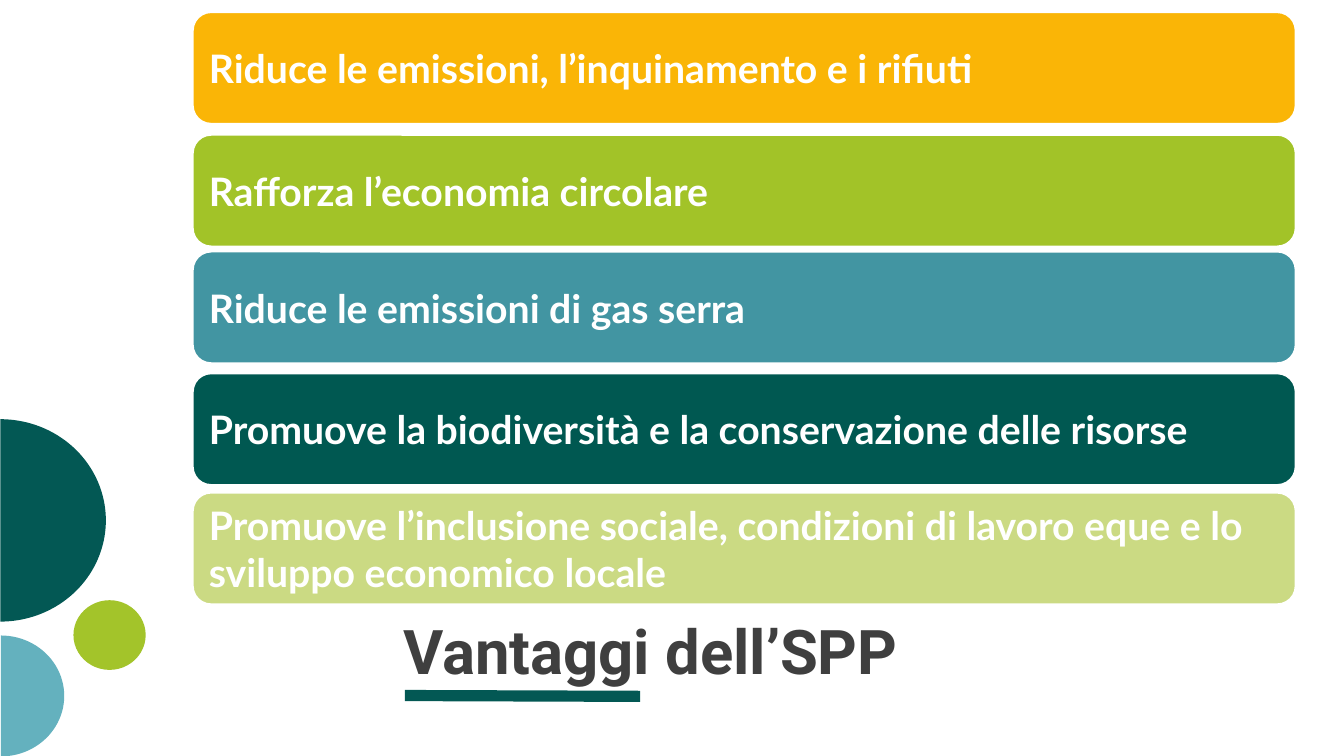
from dataclasses import dataclass

from lxml.etree import SubElement
from pptx import Presentation
from pptx.dml.color import RGBColor
from pptx.enum.shapes import MSO_CONNECTOR, MSO_SHAPE
from pptx.enum.text import MSO_ANCHOR, PP_ALIGN
from pptx.oxml.ns import qn
from pptx.util import Inches, Pt


@dataclass(frozen=True)
class Theme:
    white: str = "FFFFFF"
    title: str = "3F3F3F"
    accent: str = "035854"
    sky: str = "64B1BE"
    leaf: str = "A3C42A"
    amber: str = "FAB506"
    green: str = "A2C328"
    teal: str = "4295A2"
    forest: str = "005851"
    lime: str = "CBDA83"
    title_font: str = "Roboto"
    body_font: str = "Lato"
    title_size: int = 44
    body_size: int = 28


def rgb(value):
    return RGBColor.from_string(value)


def write(sp, text, *, font, size, color, anchor, inset=0, spacing=None):
    tf = sp.text_frame
    tf.word_wrap = True
    tf.vertical_anchor = anchor
    tf.margin_left = tf.margin_right = Inches(inset)
    tf.margin_top = tf.margin_bottom = Inches(inset)
    p = tf.paragraphs[0]
    p.alignment = PP_ALIGN.LEFT
    p.line_spacing = spacing
    r = p.add_run()
    r.text = text
    r.font.name = font
    r.font.size = Pt(size)
    r.font.bold = True
    r.font.color.rgb = rgb(color)


class Canvas:
    """Draws on one slide; lengths are columns and rows of a 16 by 9 grid."""

    def __init__(self, prs, theme):
        self.theme = theme
        self.s = prs.slides.add_slide(prs.slide_layouts[6])
        self.col = prs.slide_width / 16
        self.row = prs.slide_height / 9

    def grid(self, *lengths):
        """Turn alternating columns and rows into slide units."""
        return [round(n * (self.row if i % 2 else self.col))
                for i, n in enumerate(lengths)]

    def shape(self, kind, box, fill, rotation=0):
        sp = self.s.shapes.add_shape(kind, *self.grid(*box))
        sp.shadow.inherit = False
        sp.fill.solid()
        sp.fill.fore_color.rgb = rgb(fill)
        sp.line.fill.background()
        sp.rotation = rotation
        return sp

    def half_disc(self, box, fill):
        sp = self.shape(MSO_SHAPE.PIE, box, fill, rotation=270)
        sp.adjustments[0] = 0
        sp.adjustments[1] = 108  # 180 degrees

    def bar(self, top, text, fill):
        t = self.theme
        sp = self.shape(MSO_SHAPE.ROUNDED_RECTANGLE, (2.29, top, 13.14, 1.34), fill)
        sp.line.color.rgb = rgb(t.white)
        sp.line.width = Pt(2)
        write(sp, text, font=t.body_font, size=t.body_size, color=t.white,
              anchor=MSO_ANCHOR.MIDDLE, inset=0.11)

    def title(self, box, text):
        t = self.theme
        sp = self.s.shapes.add_textbox(*self.grid(*box))
        write(sp, text, font=t.title_font, size=t.title_size, color=t.title,
              anchor=MSO_ANCHOR.BOTTOM, spacing=0.8)

    def line(self, ends, color, width):
        sp = self.s.shapes.add_connector(MSO_CONNECTOR.STRAIGHT, *self.grid(*ends))
        sp.line.color.rgb = rgb(color)
        sp.line.width = Pt(width)
        SubElement(sp._element.spPr, qn("a:effectLst"))


def main():
    prs = Presentation()
    prs.slide_width, prs.slide_height = Inches(13.33), Inches(7.5)
    t = Theme()
    c = Canvas(prs, t)

    c.line((4.82, 8.28, 7.62, 8.29), t.accent, 8)
    c.half_disc((-1.2, 4.94, 2.41, 2.51), t.accent)
    c.half_disc((-0.71, 7.53, 1.44, 1.51), t.sky)
    c.shape(MSO_SHAPE.OVAL, (0.89, 7.13, 0.83, 0.86), t.leaf, rotation=270)
    c.title((4.8, 6.36, 10.42, 1.81), "Vantaggi dell’SPP")

    benefits = [
        (0.14, "Riduce le emissioni, l’inquinamento e i rifiuti", t.amber),
        (1.6, "Rafforza l’economia circolare", t.green),
        (2.99, "Riduce le emissioni di gas serra", t.teal),
        (4.44, "Promuove la biodiversità e la conservazione delle risorse", t.forest),
        (5.86, "Promuove l’inclusione sociale, condizioni di lavoro eque e lo "
               "sviluppo economico locale", t.lime),
    ]
    for top, text, fill in benefits:
        c.bar(top, text, fill)

    prs.save("out.pptx")


if __name__ == "__main__":
    main()
